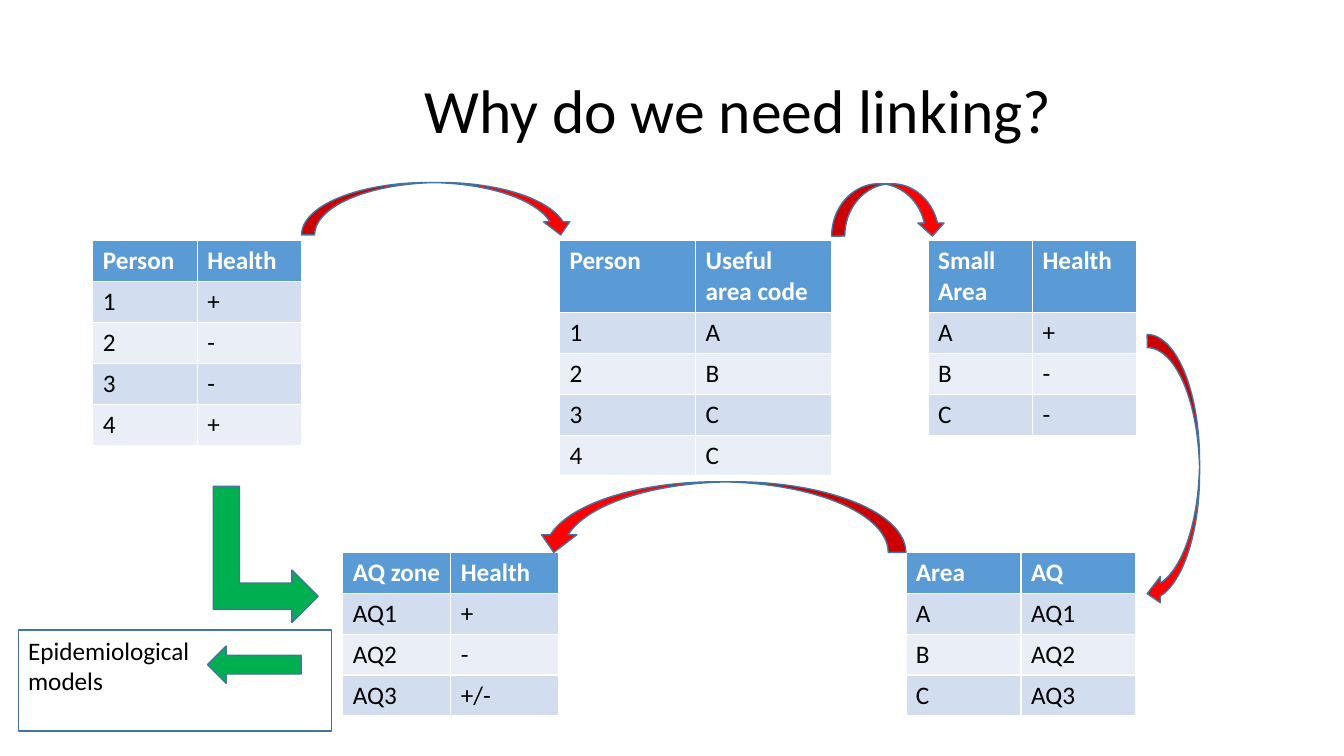
import pptx
import pptx.util
import pptx.dml.color
import pptx.enum.shapes
import pptx.enum.text

Cm = pptx.util.Cm
Pt = pptx.util.Pt
RGB = pptx.dml.color.RGBColor
KIND = pptx.enum.shapes.MSO_SHAPE
TEXT = pptx.enum.text

BLACK = RGB(0x00, 0x00, 0x00)
WHITE = RGB(0xFF, 0xFF, 0xFF)
HEAD = RGB(0x5B, 0x9B, 0xD5)
BANDS = [RGB(0xEA, 0xEF, 0xF7), RGB(0xD2, 0xDE, 0xEF)]
EDGE = RGB(0x43, 0x73, 0x9E)
RED = RGB(0xFF, 0x00, 0x00)
GREEN = RGB(0x00, 0xB0, 0x50)

TITLE = "Why do we need linking?"
NOTE = "Epidemiological models"

# left, top, column width (cm), rows
TABLES = [
    (2.34, 6.07, 2.63, [("Person", "Health"),
                        ("1", "+"), ("2", "-"), ("3", "-"), ("4", "+")]),
    (14.1, 6.07, 3.43, [("Person", "Useful area code"),
                        ("1", "A"), ("2", "B"), ("3", "C"), ("4", "C")]),
    (23.39, 6.07, 2.63, [("Small Area", "Health"),
                         ("A", "+"), ("B", "-"), ("C", "-")]),
    (22.83, 13.92, 2.9, [("Area", "AQ"),
                         ("A", "AQ1"), ("B", "AQ2"), ("C", "AQ3")]),
    (8.64, 13.92, 2.72, [("AQ zone", "Health"),
                         ("AQ1", "+"), ("AQ2", "-"), ("AQ3", "+/-")]),
]
ROW = 1.03

# kind, left, top, width, height (cm), turn, fill
ARROWS = [
    (KIND.CURVED_DOWN_ARROW, 7.6, 4.6, 6.86, 1.32, 0, RED),
    (KIND.CURVED_DOWN_ARROW, 20.96, 4.63, 2.87, 1.32, 0, RED),
    (KIND.CURVED_DOWN_ARROW, 26.14, 11.2, 6.86, 1.32, 90, RED),
    (KIND.CURVED_UP_ARROW, 13.51, 12.14, 9.32, 1.78, 180, RED),
    (KIND.BENT_UP_ARROW, 4.98, 12.65, 3.43, 2.64, 90, GREEN),
    (KIND.LEFT_ARROW, 5.23, 16.28, 2.36, 0.94, 0, GREEN),
]
NOTE_BOX = (0.46, 15.88, 4.93, 1.8)
FRAME = (KIND.RECTANGLE, 0.46, 15.88, 7.9, 2.54, 0, None)


def style(font, color, **values):
    values = {"name": "Calibri", "size": Pt(18), "bold": False} | values
    for key, value in values.items():
        setattr(font, key, value)
    font.color.rgb = color


def paint(fill, color):
    fill.solid()
    fill.fore_color.rgb = color


def add_grid(slide, left, top, width, rows):
    cols = len(rows[0])
    grid = slide.shapes.add_table(len(rows), cols, Cm(left), Cm(top),
                                  Cm(width * cols), Cm(ROW * len(rows))).table
    for col in grid.columns:
        col.width = Cm(width)
    for i, row in enumerate(rows):
        grid.rows[i].height = Cm(ROW)
        for j, word in enumerate(row):
            cell = grid.cell(i, j)
            cell.text = word
            paint(cell.fill, BANDS[i % 2] if i else HEAD)
            style(cell.text_frame.paragraphs[0].runs[0].font,
                  BLACK if i else WHITE, bold=i == 0)


def add_form(slide, kind, left, top, width, height, turn, color):
    form = slide.shapes.add_shape(kind, Cm(left), Cm(top),
                                  Cm(width), Cm(height))
    form.rotation = turn
    form.shadow.inherit = False
    form.line.color.rgb = EDGE
    form.line.width = Pt(1)
    if color is None:
        form.fill.background()
    else:
        paint(form.fill, color)


def add_title(slide):
    title = slide.shapes.title
    place = {"left": 5.69, "top": 1.02, "width": 25.83, "height": 3.68}
    for key, value in place.items():
        setattr(title, key, Cm(value))
    title.text = TITLE
    title.text_frame.vertical_anchor = TEXT.MSO_ANCHOR.MIDDLE
    line = title.text_frame.paragraphs[0]
    line.alignment = TEXT.PP_ALIGN.CENTER
    line.line_spacing = 0.9
    style(line.runs[0].font, BLACK, size=Pt(44))


def add_note(slide):
    frame = slide.shapes.add_textbox(*map(Cm, NOTE_BOX)).text_frame
    frame.word_wrap = True
    frame.auto_size = TEXT.MSO_AUTO_SIZE.SHAPE_TO_FIT_TEXT
    frame.text = NOTE
    style(frame.paragraphs[0].runs[0].font, BLACK)


def main():
    deck = pptx.Presentation()
    deck.slide_width = Cm(33.87)
    deck.slide_height = Cm(19.05)
    slide = deck.slides.add_slide(deck.slide_layouts.get_by_name("Title Only"))
    add_title(slide)
    for grid in TABLES:
        add_grid(slide, *grid)
    for arrow in ARROWS:
        add_form(slide, *arrow)
    add_note(slide)
    add_form(slide, *FRAME)
    deck.save("out.pptx")


if __name__ == "__main__":
    main()
